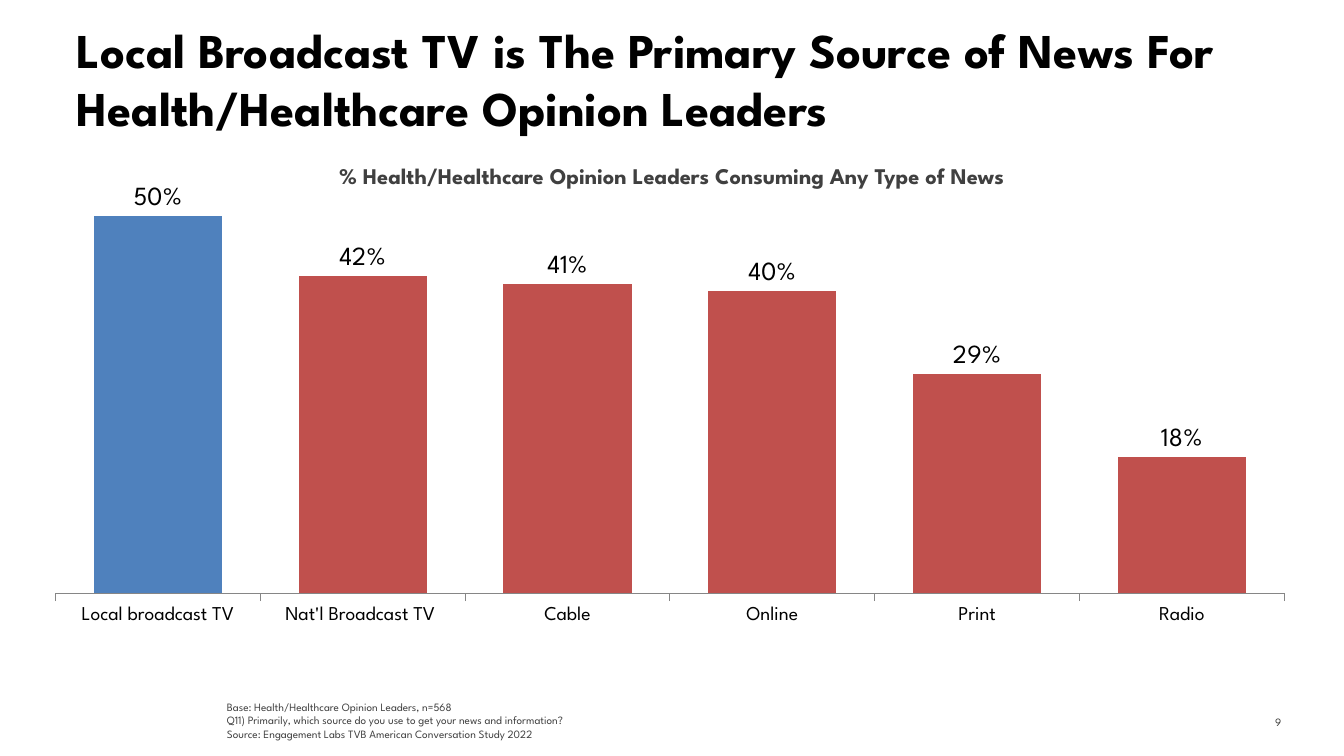
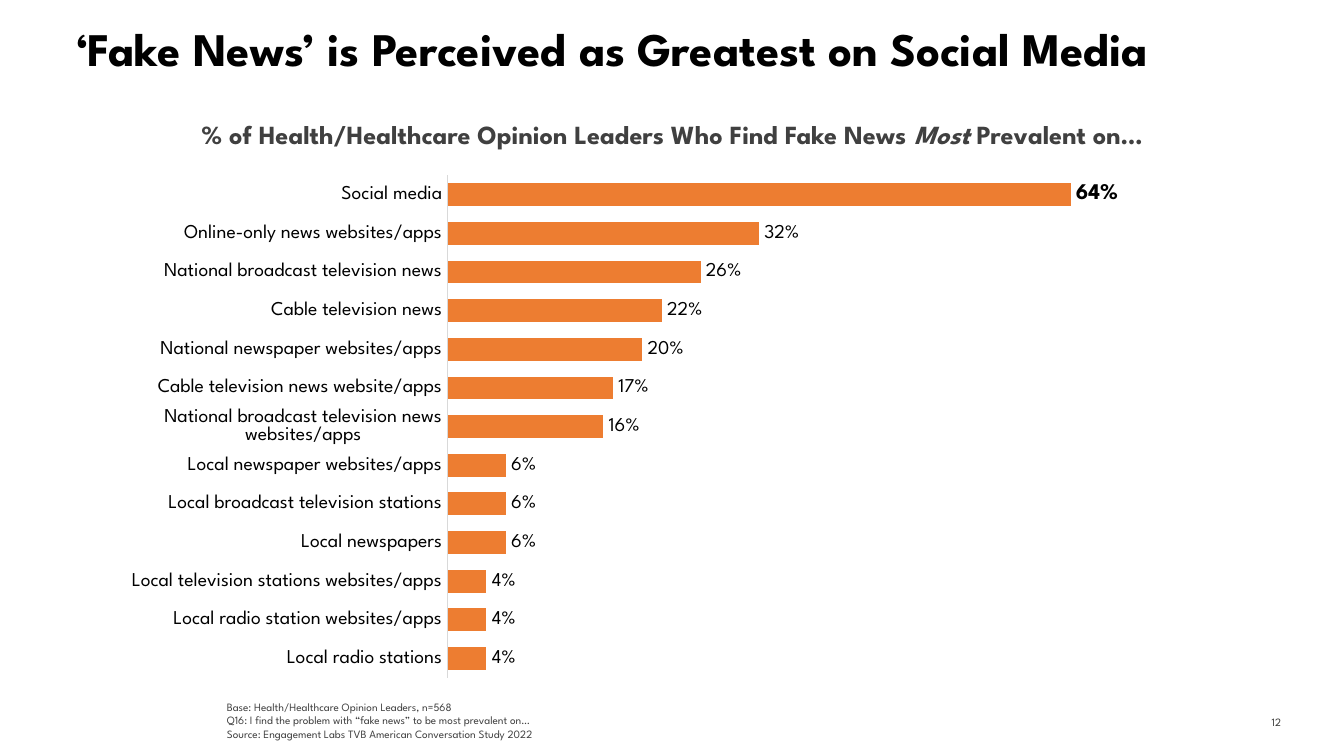
"""Build two slides on news sources and fake news, each with a bar chart."""
from lxml import etree
from pptx import Presentation
from pptx.chart.data import CategoryChartData as Data
from pptx.dml.color import RGBColor as RGB
from pptx.enum.chart import XL_CHART_TYPE as Kind
from pptx.enum.chart import XL_LABEL_POSITION as Spot
from pptx.enum.chart import XL_TICK_LABEL_POSITION as Place
from pptx.enum.chart import XL_TICK_MARK as Tick
from pptx.enum.text import MSO_ANCHOR as Anchor
from pptx.enum.text import MSO_AUTO_SIZE as Fit
from pptx.enum.text import PP_ALIGN as Align
from pptx.oxml.ns import qn
from pptx.util import Inches, Pt

FACE = "League Spartan"
COLORS = {
    "black": "000000", "gray": "404040", "page": "3C3C3A", "axis": "868686",
    "pale": "D9D9D9", "blue": "4F81BD", "red": "C0504D", "orange": "ED7D31",
}
BASE = "Base: Health/Healthcare Opinion Leaders, n=568"
SOURCE = "Source: Engagement Labs TVB American Conversation Study 2022"

SLIDES = [
    {
        "title": "Local Broadcast TV is The Primary Source of News For "
                 "Health/Healthcare Opinion Leaders",
        "title_box": (0.47, 0.15, 9.26, 0.89), "title_size": 26,
        "head": ["% Health/Healthcare Opinion Leaders Consuming Any Type of News"],
        "head_box": (2.13, 1.16, 5.74, 0.3), "head_size": 12,
        "ask": "Q11) Primarily, which source do you use to get your news and information?",
        "note_box": (1.59, 5.16, 8.15, 0.4), "page": "9",
        "chart": {
            "kind": Kind.COLUMN_CLUSTERED, "box": (0.41, 1.29, 9.15, 3.93),
            "plot": (0, 0.081, 1, 0.714), "max": 0.5, "gap": 60, "size": 14,
            "fill": "red", "line": "axis", "width": 0.5,
            "tick": Tick.OUTSIDE, "flip": False, "first": {"fill": "blue"},
            "rows": [
                ("Local broadcast TV", 0.5), ("Nat'l Broadcast TV ", 0.42),
                ("Cable", 0.41), ("Online", 0.4), ("Print", 0.29), ("Radio", 0.18),
            ],
        },
    },
    {
        "title": "‘Fake News’ is Perceived as Greatest on Social Media",
        "title_box": (0.47, 0.15, 9.19, 0.68), "title_size": 25,
        "head": ["% of Health/Healthcare Opinion Leaders Who Find Fake News ",
                 "Most", " Prevalent on…"],
        "head_box": (1.01, 0.83, 7.98, 0.34), "head_size": 14,
        "ask": "Q16: I find the problem with “fake news” to be most prevalent on…",
        "note_box": (1.59, 5.16, 7.53, 0.4), "page": "12",
        "chart": {
            "kind": Kind.BAR_CLUSTERED, "box": (0.51, 1.16, 9.07, 4.03),
            "plot": (0.311, 0.036, 0.559, 0.928), "max": 0.7, "gap": 70, "size": 10.5,
            "fill": "orange", "line": "pale", "width": 0.75,
            "tick": Tick.NONE, "flip": True, "first": {"size": 12},
            "rows": [
                ("Social media", 0.64),
                ("Online-only news websites/apps", 0.32),
                ("National broadcast television news", 0.26),
                ("Cable television news", 0.22),
                ("National newspaper websites/apps", 0.2),
                ("Cable television news website/apps", 0.17),
                ("National broadcast television news websites/apps", 0.16),
                ("Local newspaper websites/apps", 0.06),
                ("Local broadcast television stations", 0.06),
                ("Local newspapers", 0.06),
                ("Local television stations websites/apps", 0.04),
                ("Local radio station websites/apps", 0.04),
                ("Local radio stations", 0.04),
            ],
        },
    },
]


def color(name):
    return RGB.from_string(COLORS[name])


def style(font, size, tint="black", bold=False):
    font.name, font.size, font.bold = FACE, Pt(size), bold
    font.color.rgb = color(tint)


def place(box):
    return [Inches(n) for n in box]


def add_title(slide, text, box, size):
    title = slide.shapes.title
    title.left, title.top, title.width, title.height = place(box)
    frame = title.text_frame
    frame.text = text
    frame.auto_size, frame.word_wrap = Fit.NONE, True
    frame.vertical_anchor = Anchor.TOP
    frame.margin_top = 0
    para = frame.paragraphs[0]
    para.alignment = Align.LEFT
    style(para.font, size, bold=True)


def add_text(slide, box, lines, size, tint="gray", align=Align.LEFT,
             anchor=Anchor.TOP, wrap=True, bold=False):
    frame = slide.shapes.add_textbox(*place(box)).text_frame
    frame.word_wrap, frame.vertical_anchor = wrap, anchor
    for i, parts in enumerate(lines):
        para = frame.add_paragraph() if i else frame.paragraphs[0]
        para.alignment = align
        style(para.font, size, tint, bold)
        for j, part in enumerate(parts):
            run = para.add_run()
            run.text = part
            if j == 1:
                run.font.italic = True


def set_plot(chart, plot):
    area = chart.element.chart.plotArea
    for old in area.findall(qn("c:layout")):
        area.remove(old)
    layout = etree.Element(qn("c:layout"))
    area.insert(0, layout)
    manual = etree.SubElement(layout, qn("c:manualLayout"))
    keys = ("layoutTarget", "xMode", "yMode", "x", "y", "w", "h")
    for key, val in zip(keys, ("inner", "edge", "edge", *plot)):
        etree.SubElement(manual, qn("c:" + key)).set("val", str(val))


def add_chart(slide, item):
    data = Data(number_format="0%")
    data.categories = [name for name, _ in item["rows"]]
    data.add_series("Series 1", [val for _, val in item["rows"]])
    chart = slide.shapes.add_chart(item["kind"], *place(item["box"]), data).chart
    chart.has_title = chart.has_legend = False
    style(chart.font, 10.5)
    set_plot(chart, item["plot"])

    scale = chart.value_axis
    scale.minimum_scale, scale.maximum_scale = 0, item["max"]
    scale.has_major_gridlines = scale.visible = False
    axis = chart.category_axis
    axis.reverse_order = item["flip"]
    axis.major_tick_mark, axis.minor_tick_mark = item["tick"], Tick.NONE
    axis.tick_label_position = Place.NEXT_TO_AXIS
    axis.format.line.color.rgb = color(item["line"])
    axis.format.line.width = Pt(item["width"])
    style(axis.tick_labels.font, 10.5)

    bars = chart.plots[0]
    bars.gap_width, bars.vary_by_categories = item["gap"], False
    series = bars.series[0]
    series.format.fill.solid()
    series.format.fill.fore_color.rgb = color(item["fill"])
    labels = series.data_labels
    labels.show_value, labels.position = True, Spot.OUTSIDE_END
    labels.number_format, labels.number_format_is_linked = "0%", False
    style(labels.font, item["size"])

    first, point = item["first"], series.points[0]
    if "fill" in first:
        point.format.fill.solid()
        point.format.fill.fore_color.rgb = color(first["fill"])
    if "size" in first:
        style(point.data_label.font, first["size"], bold=True)
        point.data_label.position = Spot.OUTSIDE_END


def main():
    deck = Presentation()
    deck.slide_width = Inches(10)
    deck.slide_height = deck.slide_width * 9 // 16
    for item in SLIDES:
        slide = deck.slides.add_slide(deck.slide_layouts[5])
        add_title(slide, item["title"], item["title_box"], item["title_size"])
        add_chart(slide, item["chart"])
        add_text(slide, item["head_box"], [item["head"]], item["head_size"],
                 align=Align.CENTER, wrap=False, bold=True)
        add_text(slide, item["note_box"], [[BASE], [item["ask"]], [SOURCE]],
                 6, anchor=Anchor.BOTTOM)
        add_text(slide, (9.04, 5.22, 0.59, 0.3), [[item["page"]]], 6, "page",
                 Align.RIGHT, Anchor.MIDDLE)
    deck.save("out.pptx")


if __name__ == "__main__":
    main()
